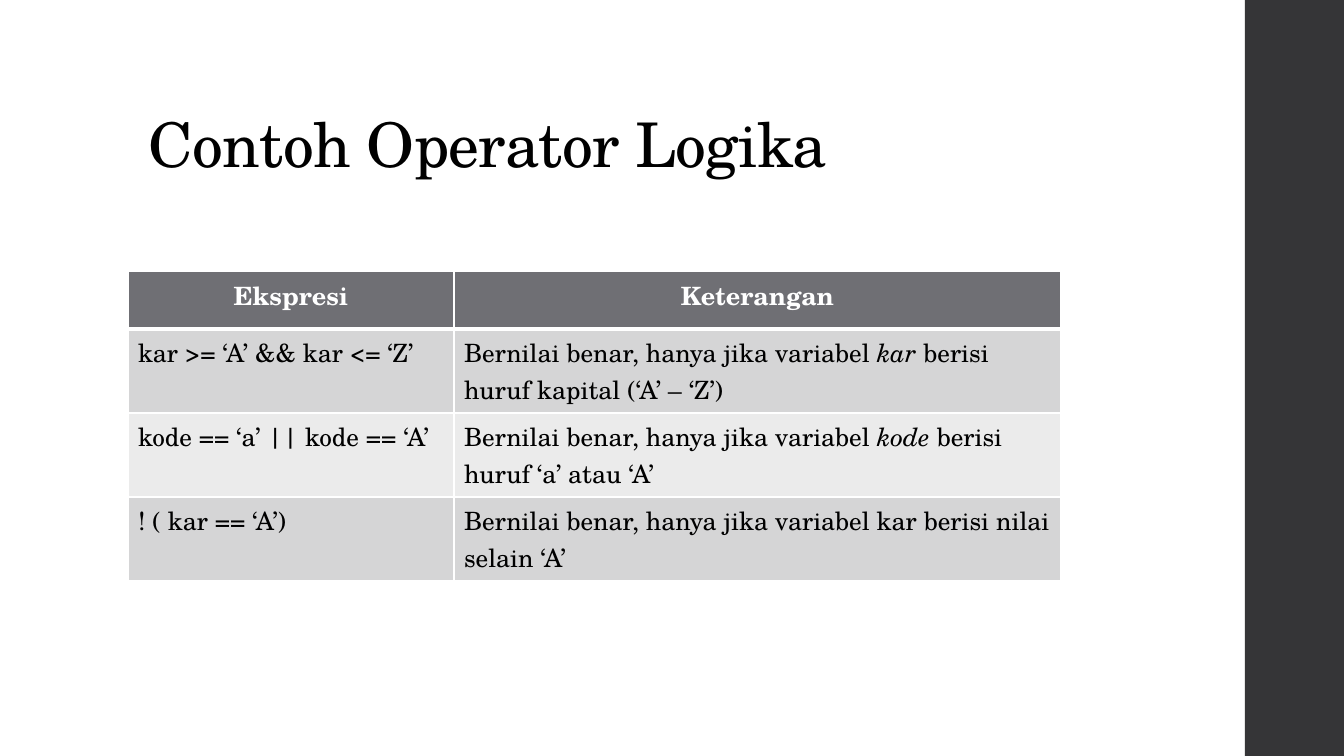
from lxml import etree
from pptx import Presentation
from pptx.dml.color import RGBColor
from pptx.enum.shapes import MSO_SHAPE
from pptx.enum.text import MSO_ANCHOR, PP_ALIGN
from pptx.oxml.ns import qn
from pptx.util import Emu, Pt

RECTANGLE = MSO_SHAPE.RECTANGLE
BOTTOM = MSO_ANCHOR.BOTTOM
CENTER, LEFT = PP_ALIGN.CENTER, PP_ALIGN.LEFT

EMU_PER_PX = 914400 / 100.8
PAGE_WIDTH, PAGE_HEIGHT = 1344, 756
FONT = "TeX Gyre Schola"
COLORS = {
    "bar": "353537",
    "header": "6F6F74",
    "odd": "D5D5D6",
    "even": "EBEBEB",
    "text": "000000",
    "white": "FFFFFF",
}

COLUMN_SHARES = [326, 607]
HEADER_HEIGHT = 58
HEADERS = ["Ekspresi", "Keterangan"]
# Each cell is a list of spans; every second span is italic.
EXAMPLES = [
    [["kar >= ‘A’ && kar <= ‘Z’"],
     ["Bernilai benar, hanya jika variabel ", "kar ",
      "berisi huruf kapital (‘A’ – ‘Z’)"]],
    [["kode == ‘a’ || kode == ‘A’"],
     ["Bernilai benar, hanya jika variabel ", "kode ",
      "berisi huruf ‘a’ atau ‘A’"]],
    [["! ( kar == ‘A’)"],
     ["Bernilai benar, hanya jika variabel kar berisi nilai selain ‘A’"]],
]


def px(length):
    return Emu(round(length * EMU_PER_PX))


def rgb(name):
    return RGBColor.from_string(COLORS[name])


def set_font(font, size, color, bold=False):
    font.name = FONT
    font.size = Pt(size)
    font.bold = bold
    font.color.rgb = rgb(color)


def add_side_bar(page, box):
    bar = page.shapes.add_shape(RECTANGLE, *map(px, box))
    bar.shadow.inherit = False
    bar.fill.solid()
    bar.fill.fore_color.rgb = rgb("bar")
    bar.line.fill.background()


def add_title(page, box, text):
    frame = page.shapes.add_textbox(*map(px, box)).text_frame
    frame.word_wrap = True
    frame.vertical_anchor = BOTTOM
    para = frame.paragraphs[0]
    para.line_spacing = 0.9
    span = para.add_run()
    span.text = text
    set_font(para.font, 44, "text")
    span.font._element.set("spc", "-50")


def set_borders(cell, bottom_width):
    properties = cell._tc.get_or_add_tcPr()
    widths = {"a:lnL": 1, "a:lnR": 1, "a:lnT": 1, "a:lnB": bottom_width}
    for position, (tag, width) in enumerate(widths.items()):
        line = etree.Element(qn(tag), w=str(Pt(width)))
        fill = etree.SubElement(line, qn("a:solidFill"))
        etree.SubElement(fill, qn("a:srgbClr"), val=COLORS["white"])
        properties.insert(position, line)


def fill_cell(cell, spans, fill, color, align=LEFT, bold=False, bottom_width=1):
    cell.fill.solid()
    cell.fill.fore_color.rgb = rgb(fill)
    set_borders(cell, bottom_width)
    para = cell.text_frame.paragraphs[0]
    para.alignment = align
    for index, text in enumerate(spans):
        span = para.add_run()
        span.text = text
        if index % 2:
            span.font.italic = True
    set_font(para.font, 18, color, bold)


def add_examples_table(page, box):
    left, top, width, height = box
    table = page.shapes.add_table(
        len(EXAMPLES) + 1, len(HEADERS), *map(px, box)).table
    for column, share in zip(table.columns, COLUMN_SHARES):
        column.width = px(width * share / sum(COLUMN_SHARES))
    for row in table.rows:
        row.height = px((height - HEADER_HEIGHT) / len(EXAMPLES))
    table.rows[0].height = px(HEADER_HEIGHT)

    for column, header in enumerate(HEADERS):
        fill_cell(table.cell(0, column), [header], "header", "white",
                  CENTER, bold=True, bottom_width=3)
    for row, example in enumerate(EXAMPLES, start=1):
        for column, spans in enumerate(example):
            fill_cell(table.cell(row, column), spans,
                      "odd" if row % 2 else "even", "text",
                      bottom_width=1)
            if row == 1:
                top_line = table.cell(row, column)._tc.tcPr.find(qn("a:lnT"))
                top_line.set("w", str(Pt(3)))


def main():
    deck = Presentation()
    deck.slide_width, deck.slide_height = px(PAGE_WIDTH), px(PAGE_HEIGHT)
    page = deck.slides.add_slide(deck.slide_layouts[6])
    add_side_bar(page, (1245, 0, PAGE_WIDTH - 1245, PAGE_HEIGHT))
    add_title(page, (139, 40, 1068, 146), "Contoh Operator Logika")
    add_examples_table(page, (128, 271, 933, 310))
    deck.save("out.pptx")


if __name__ == "__main__":
    main()
